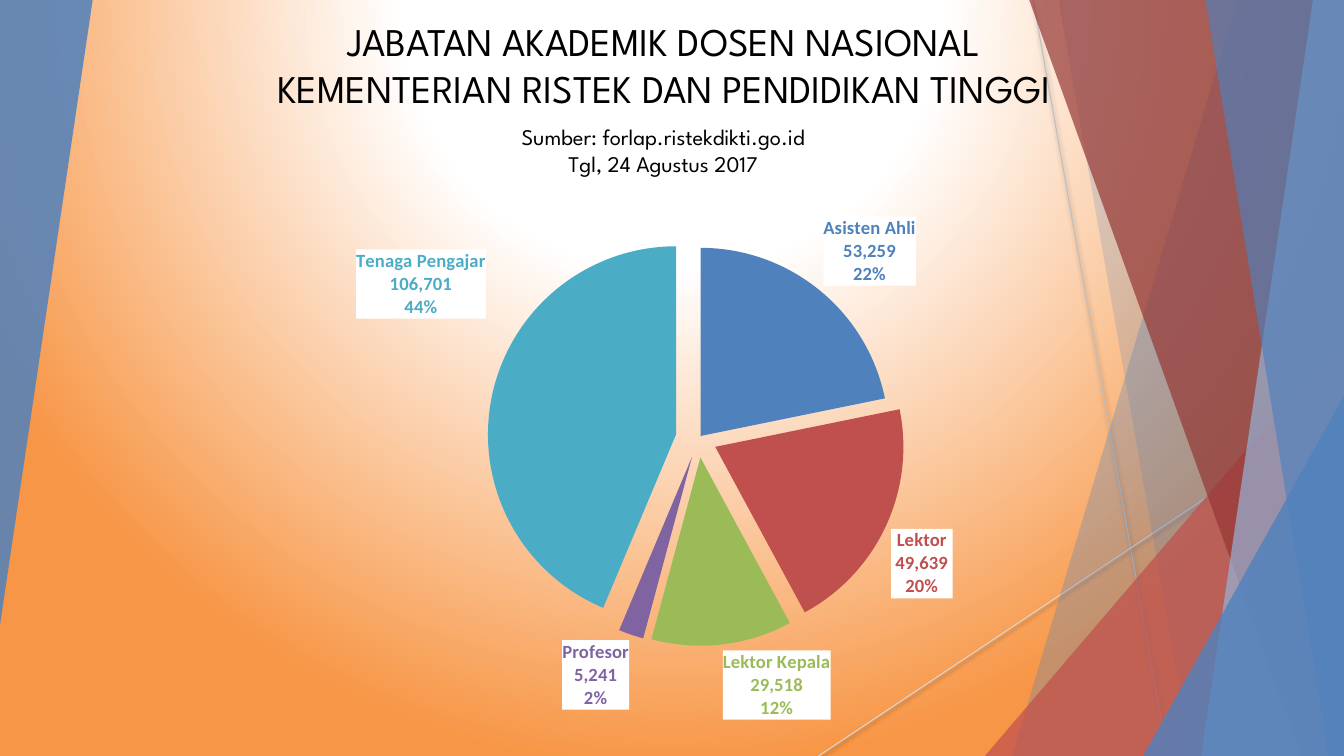
from lxml.etree import SubElement
from pptx import Presentation
from pptx.chart.data import CategoryChartData
from pptx.dml.color import RGBColor
from pptx.enum.chart import XL_CHART_TYPE, XL_LABEL_POSITION
from pptx.enum.shapes import MSO_CONNECTOR, MSO_SHAPE
from pptx.enum.text import MSO_ANCHOR, PP_ALIGN
from pptx.oxml import parse_xml
from pptx.oxml.ns import nsdecls, qn
from pptx.util import Pt

WIDTH, HEIGHT = 960, 540
TOP = -0.6
BLACK = RGBColor(0x00, 0x00, 0x00)
WHITE = RGBColor(0xFF, 0xFF, 0xFF)
BLUE = RGBColor(0x4F, 0x81, 0xBD)
LIGHT_BLUE = RGBColor(0x95, 0xB3, 0xD7)
RED = RGBColor(0xC0, 0x50, 0x4D)
DARK_RED = RGBColor(0x95, 0x37, 0x35)
GREEN = RGBColor(0x9B, 0xBB, 0x59)
PURPLE = RGBColor(0x80, 0x64, 0xA2)
AQUA = RGBColor(0x4B, 0xAC, 0xC6)
ORANGE = RGBColor(0xF7, 0x96, 0x46)
GREY = RGBColor(0xBF, 0xBF, 0xBF)
LIGHT_GREY = RGBColor(0xD9, 0xD9, 0xD9)
HEADING_FONT, CHART_FONT = "League Spartan", "Calibri"

TITLE = ["JABATAN AKADEMIK DOSEN NASIONAL", "KEMENTERIAN RISTEK DAN PENDIDIKAN TINGGI"]
SOURCE = ["Sumber: forlap.ristekdikti.go.id", "Tgl, 24 Agustus 2017"]
TITLE_BOX = (134.64, 8.64, 678.96, 74.88)
SOURCE_BOX = (334.8, 84.24, 277.92, 46.08)
CHART_BOX = (121.68, 123.84, 691.92, 395.28)

# category, lecturers, colour, explosion in percent, vertical label shift
RANKS = [
    ("Asisten Ahli", 53259, BLUE, 2, 0),
    ("Lektor", 49639, RED, 10, 0),
    ("Lektor Kepala", 29518, GREEN, 10, 0),
    ("Profesor", 5241, PURPLE, 10, 0),
    ("Tenaga Pengajar", 106701, AQUA, 12, -0.14),
]
COUNT_FORMAT = '_(* #,##0_);_(* \\(#,##0\\);_(* "-"_);_(@_)'
PIE_LAYOUT = {"x": 0.35, "y": 0.14, "w": 0.39, "h": 0.68}

# start x, start y, end x, end y, colour
RAYS = [(738, 0, 834, 540, GREY), (960, 290, 584.6, 540, LIGHT_GREY)]

# A panel has its left edge's top x and bottom x, and reaches the right side.
# A triangle has left, top, width, height and rotation.
FACETS = [
    ("panel", (884, 723), BLUE, 30),
    ("panel", (756, 851), BLUE, 20),
    ("triangle", (703.5, 239.8, 256.5, 300.2, 0), RED, 72),
    ("panel", (735, 929.5), DARK_RED, 70),
    ("panel", (938, 858), LIGHT_BLUE, 70),
    ("panel", (861, 949), BLUE, 65),
    ("triangle", (816.5, 283, 143.5, 257, 0), BLUE, 80),
    ("triangle", (0, 0, 66.2, 446.4, 180), BLUE, 85),
]


def points(values):
    return [Pt(value) for value in values]


def paint_background(page):
    fill = page.background.fill
    fill.solid()
    fill.fore_color.rgb = WHITE
    solid = page.element.xpath("p:cSld/p:bg/p:bgPr/a:solidFill")[0]
    stops = "".join(
        f'<a:gs pos="{pos}"><a:srgbClr val="{color}"/></a:gs>'
        for pos, color in [(0, WHITE), (35000, WHITE), (100000, ORANGE)])
    gradient = parse_xml(
        f'<a:gradFill {nsdecls("a")} rotWithShape="1"><a:gsLst>{stops}</a:gsLst>'
        '<a:path path="circle"><a:fillToRect l="50000" t="-80000" r="50000" b="180000"/>'
        '</a:path></a:gradFill>')
    solid.getparent().replace(solid, gradient)


def add_ray(page, start_x, start_y, end_x, end_y, color):
    ray = page.shapes.add_connector(
        MSO_CONNECTOR.STRAIGHT, *points((start_x, start_y, end_x, end_y)))
    ray.line.color.rgb = color
    ray.line.width = Pt(0.75)
    ray.element.spPr.append(parse_xml(
        f'<a:effectLst {nsdecls("a")}><a:outerShdw blurRad="{Pt(3.1)}" dist="{Pt(1.6)}" '
        'dir="5400000" rotWithShape="0"><a:srgbClr val="000000"><a:alpha val="38000"/>'
        '</a:srgbClr></a:outerShdw></a:effectLst>'))


def add_facet(page, kind, geometry, color, opacity):
    if kind == "panel":
        top_x, bottom_x = geometry
        builder = page.shapes.build_freeform(Pt(top_x), Pt(TOP))
        corners = [(WIDTH, TOP), (WIDTH, HEIGHT), (bottom_x, HEIGHT)]
        builder.add_line_segments([points(corner) for corner in corners], close=True)
        facet = builder.convert_to_shape()
    else:
        facet = page.shapes.add_shape(MSO_SHAPE.ISOSCELES_TRIANGLE, *points(geometry[:4]))
        facet.adjustments[0] = 1.0
        facet.rotation = geometry[4]
    facet.shadow.inherit = False
    facet.fill.solid()
    facet.fill.fore_color.rgb = color
    facet.line.fill.background()
    tint = facet.element.spPr.xpath("a:solidFill/a:srgbClr")[0]
    SubElement(tint, qn("a:alpha"), val=str(opacity * 1000))


def write_centred(box, lines, size):
    frame = box.text_frame
    frame.word_wrap = True
    frame.vertical_anchor = MSO_ANCHOR.TOP
    for index, line in enumerate(lines):
        para = frame.add_paragraph() if index else frame.paragraphs[0]
        para.alignment = PP_ALIGN.CENTER
        span = para.add_run()
        span.text = line
        span.font.size = Pt(size)
        span.font.name = HEADING_FONT
        span.font.color.rgb = BLACK


def manual_layout(**values):
    entries = "".join(f'<c:{name} val="{value}"/>' for name, value in values.items())
    return parse_xml(f'<c:layout {nsdecls("c")}><c:manualLayout>{entries}'
                     '</c:manualLayout></c:layout>')


def format_slice(chart, index, color, explosion, shift):
    point = chart.plots[0].series[0].points[index]
    point.format.fill.solid()
    point.format.fill.fore_color.rgb = color
    slice_format = chart.element.xpath(f".//c:dPt[c:idx/@val='{index}']/c:spPr")[0]
    slice_format.addprevious(
        parse_xml(f'<c:explosion {nsdecls("c")} val="{explosion}"/>'))

    font = point.data_label.font
    font.size = Pt(13.3)
    font.bold = True
    font.name = CHART_FONT
    font.color.rgb = color
    point.data_label.position = XL_LABEL_POSITION.OUTSIDE_END
    label = chart.element.xpath(f".//c:dLbl[c:idx/@val='{index}']")[0]
    for old in label.xpath("c:spPr"):
        label.remove(old)
    label.xpath("c:txPr")[0].addprevious(parse_xml(
        f'<c:spPr {nsdecls("c", "a")}><a:solidFill><a:srgbClr val="{WHITE}"/>'
        '</a:solidFill></c:spPr>'))
    for flag in label.xpath("c:showVal | c:showCatName | c:showPercent"):
        flag.set("val", "1")
    SubElement(label, qn("c:separator")).text = "\n"
    if shift:
        label.xpath("c:idx")[0].addnext(manual_layout(x=0, y=shift))


def add_rank_chart(page):
    data = CategoryChartData(number_format=COUNT_FORMAT)
    data.categories = [rank[0] for rank in RANKS]
    data.add_series("Series 1", [rank[1] for rank in RANKS])
    chart = page.shapes.add_chart(XL_CHART_TYPE.PIE, *points(CHART_BOX), data).chart
    chart.has_legend = False
    chart.has_title = False
    chart.font.size = Pt(10)
    chart.font.name = CHART_FONT
    chart.font.color.rgb = BLACK
    chart.plots[0].vary_by_categories = True
    for index, (_, _, color, explosion, shift) in enumerate(RANKS):
        format_slice(chart, index, color, explosion, shift)
    for leader_flag in chart.element.xpath(".//c:showLeaderLines"):
        leader_flag.set("val", "0")
    plot_area = chart.element.xpath(".//c:plotArea")[0]
    for old in plot_area.xpath("c:layout"):
        plot_area.remove(old)
    plot_area.insert(0, manual_layout(
        layoutTarget="inner", xMode="edge", yMode="edge", **PIE_LAYOUT))


def main():
    deck = Presentation()
    deck.slide_width, deck.slide_height = points((WIDTH, HEIGHT))
    page = deck.slides.add_slide(deck.slide_layouts[5])
    paint_background(page)
    for ray in RAYS:
        add_ray(page, *ray)
    for facet in FACETS:
        add_facet(page, *facet)

    title = page.shapes.title
    title.left, title.top, title.width, title.height = points(TITLE_BOX)
    write_centred(title, TITLE, 28)
    title.element.getparent().append(title.element)  # in front of the facets
    write_centred(page.shapes.add_textbox(*points(SOURCE_BOX)), SOURCE, 16)
    add_rank_chart(page)
    deck.save("out.pptx")


if __name__ == "__main__":
    main()
